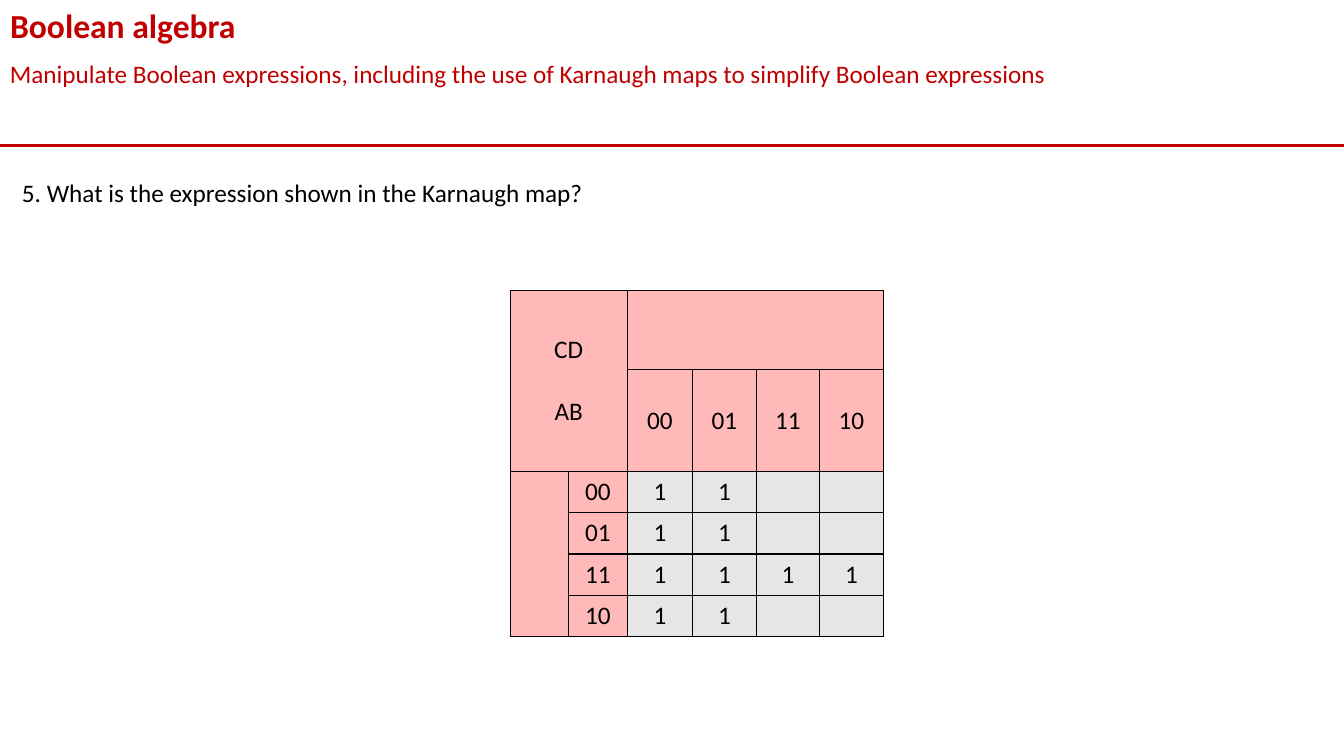
import dataclasses
import itertools

import lxml.etree
import pptx
import pptx.dml.color
import pptx.enum.shapes
import pptx.enum.text
import pptx.oxml.ns
import pptx.util


@dataclasses.dataclass(frozen=True)
class Theme:
    font: str = "Calibri"
    red: str = "C00000"
    black: str = "000000"
    heading_fill: str = "FFB9B9"
    value_fill: str = "E7E6E6"
    title_size: int = 24
    body_size: int = 18
    rule_width: float = 2.25
    border_width: int = 1
    label_gap: int = 22


THEME = Theme()
SLIDE_WIDTH, SLIDE_HEIGHT = 1333, 750
GRAY_CODE = ["00", "01", "11", "10"]
MAP_VALUES = [
    ["1", "1", "", ""],
    ["1", "1", "", ""],
    ["1", "1", "1", "1"],
    ["1", "1", "", ""],
]
COLUMN_WIDTHS = [58, 58, 65, 63, 63, 63]
ROW_HEIGHTS = [79, 40, 41, 41, 41, 41]


def px(length):
    return pptx.util.Emu(length * 9144)


def rgb(color):
    return pptx.dml.color.RGBColor.from_string(color)


def format_paragraph(paragraph, size, color, bold=False, centered=False):
    alignment = pptx.enum.text.PP_ALIGN
    paragraph.alignment = alignment.CENTER if centered else alignment.LEFT
    paragraph.font.name = THEME.font
    paragraph.font.size = pptx.util.Pt(size)
    paragraph.font.bold = bold
    paragraph.font.color.rgb = rgb(color)


def fill_text(shape, box, text, size, color, bold=False):
    shape.left, shape.top, shape.width, shape.height = map(px, box)
    frame = shape.text_frame
    frame.word_wrap = True
    frame.vertical_anchor = pptx.enum.text.MSO_ANCHOR.TOP
    frame.auto_size = pptx.enum.text.MSO_AUTO_SIZE.SHAPE_TO_FIT_TEXT
    frame.text = text
    format_paragraph(frame.paragraphs[0], size, color, bold)


def add_text(slide, box, text, color):
    shape = slide.shapes.add_textbox(*map(px, box))
    fill_text(shape, box, text, THEME.body_size, color)


def add_header(slide, box):
    left, top, width, height = box
    fill_text(slide.shapes.title, (left, top, width, 50), "Boolean algebra",
              THEME.title_size, THEME.red, bold=True)
    add_text(slide, (left, top + 53, width, 40),
             "Manipulate Boolean expressions, including the use of Karnaugh maps "
             "to simplify Boolean expressions", THEME.red)
    bottom = px(top + height)
    rule = slide.shapes.add_connector(
        pptx.enum.shapes.MSO_CONNECTOR.STRAIGHT,
        px(left), bottom, px(left + width), bottom)
    rule.line.color.rgb = rgb(THEME.red)
    rule.line.width = pptx.util.Pt(THEME.rule_width)
    lxml.etree.SubElement(rule._element.spPr, pptx.oxml.ns.qn("a:effectLst"))


def add_borders(cell):
    properties = cell._tc.get_or_add_tcPr()
    for position, side in enumerate(["lnL", "lnR", "lnT", "lnB"]):
        border = lxml.etree.Element(
            pptx.oxml.ns.qn(f"a:{side}"),
            w=str(pptx.util.Pt(THEME.border_width)))
        fill = lxml.etree.SubElement(border, pptx.oxml.ns.qn("a:solidFill"))
        lxml.etree.SubElement(
            fill, pptx.oxml.ns.qn("a:srgbClr"), val=THEME.black)
        properties.insert(position, border)


def format_cell(cell, text, fill):
    cell.fill.solid()
    cell.fill.fore_color.rgb = rgb(fill)
    cell.vertical_anchor = pptx.enum.text.MSO_ANCHOR.MIDDLE
    cell.text = text
    for position, paragraph in enumerate(cell.text_frame.paragraphs):
        format_paragraph(paragraph, THEME.body_size, THEME.black, centered=True)
        if position:
            paragraph.space_before = pptx.util.Pt(THEME.label_gap)
    add_borders(cell)


def add_karnaugh_map(slide, left, top):
    table = slide.shapes.add_table(
        len(ROW_HEIGHTS), len(COLUMN_WIDTHS), px(left), px(top),
        px(sum(COLUMN_WIDTHS)), px(sum(ROW_HEIGHTS))).table
    table.first_row = table.horz_banding = False
    for column, width in zip(table.columns, COLUMN_WIDTHS):
        column.width = px(width)
    for row, height in zip(table.rows, ROW_HEIGHTS):
        row.height = px(height)

    texts = [["CD\nAB", "", "", "", "", ""], ["", "", *GRAY_CODE]]
    texts += [["", code, *values] for code, values in zip(GRAY_CODE, MAP_VALUES)]
    for row, column in itertools.product(range(6), range(6)):
        is_value = row >= 2 and column >= 2
        fill = THEME.value_fill if is_value else THEME.heading_fill
        format_cell(table.cell(row, column), texts[row][column], fill)

    for first, last in [((0, 0), (1, 1)), ((0, 2), (0, 5)), ((2, 0), (5, 0))]:
        table.cell(*first).merge(table.cell(*last))


def main():
    presentation = pptx.Presentation()
    presentation.slide_width = px(SLIDE_WIDTH)
    presentation.slide_height = px(SLIDE_HEIGHT)
    slide = presentation.slides.add_slide(presentation.slide_layouts[5])
    add_header(slide, (0, 0, SLIDE_WIDTH, 144))
    add_text(slide, (12, 171, 1307, 40),
             "5. What is the expression shown in the Karnaugh map?", THEME.black)
    add_karnaugh_map(slide, 506, 288)
    presentation.save("out.pptx")


if __name__ == "__main__":
    main()
